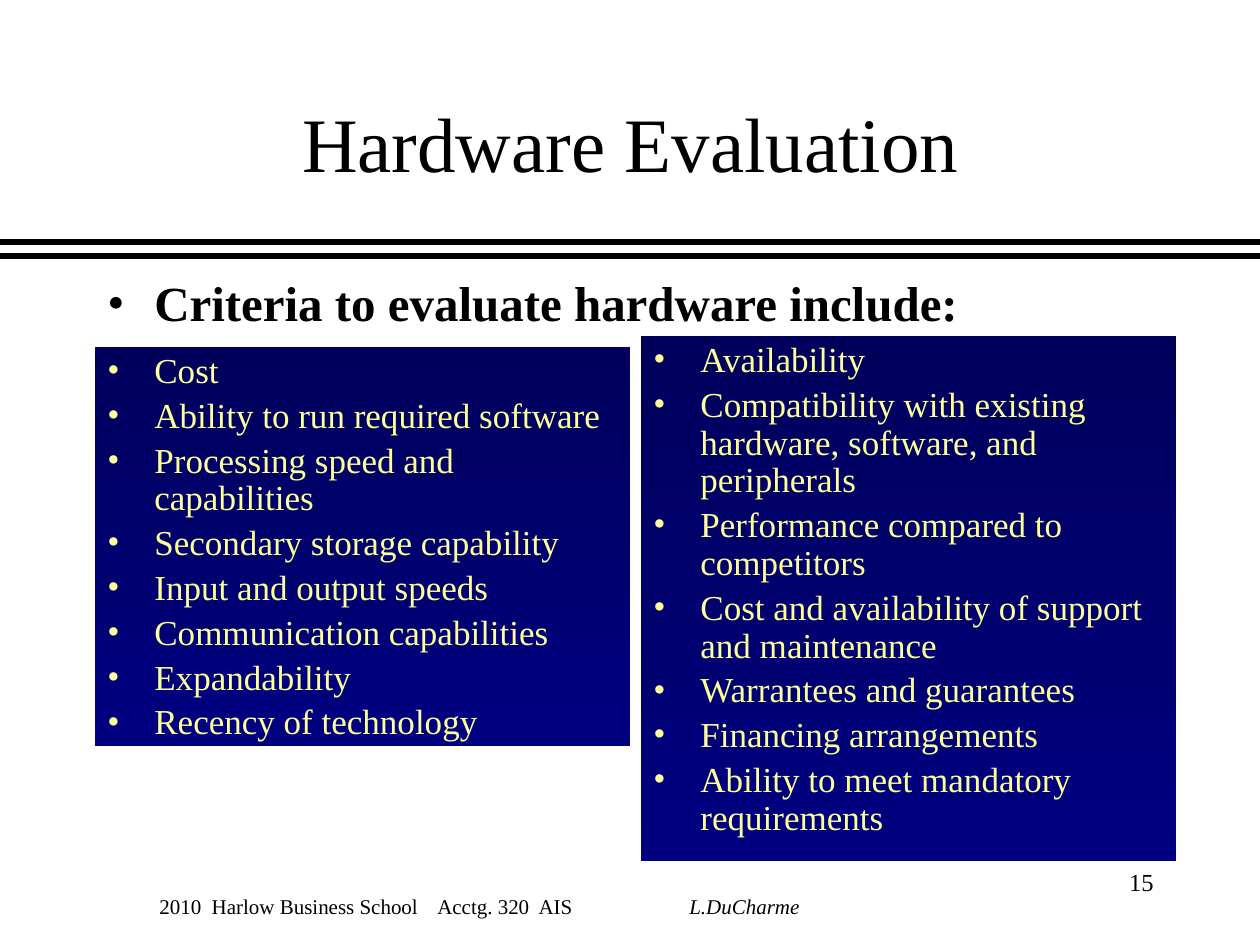
from dataclasses import dataclass
from lxml.etree import SubElement
from pptx import Presentation
from pptx.dml.color import RGBColor
from pptx.enum.shapes import MSO_CONNECTOR, MSO_SHAPE
from pptx.enum.text import MSO_ANCHOR, PP_ALIGN
from pptx.oxml.ns import qn
from pptx.util import Emu, Inches, Pt

SCALE = Inches(1) / 126


def px(n):
    return Emu(round(n * SCALE))


@dataclass(frozen=True)
class Theme:
    font: str = "Times New Roman"
    ink: str = "000000"
    pale: str = "FFFF99"
    dark: str = "00005C"
    navy: str = "000080"
    title: int = 44
    lead: int = 28
    item: int = 20
    page: int = 14
    foot: int = 12


class Deck:
    def __init__(self, theme, slide):
        self.theme = theme
        self.slide = slide

    def rule(self, y, width):
        line = self.slide.shapes.add_connector(
            MSO_CONNECTOR.STRAIGHT, 0, px(y), px(1260), px(y))
        line.line.color.rgb = RGBColor.from_string(self.theme.ink)
        line.line.width = Pt(width)
        SubElement(line._element.spPr, qn("a:effectLst"))

    def run(self, para, text, size, color, bold=False, italic=False):
        run = para.add_run()
        run.text = text
        font = run.font
        font.name, font.size = self.theme.font, Pt(size)
        font.bold, font.italic = bold, italic
        font.color.rgb = RGBColor.from_string(color)

    def box(self, x, y, w, h, align=PP_ALIGN.LEFT, anchor=MSO_ANCHOR.TOP):
        frame = self.slide.shapes.add_textbox(px(x), px(y), px(w), px(h)).text_frame
        frame.word_wrap = True
        frame.vertical_anchor = anchor
        frame.paragraphs[0].alignment = align
        return frame

    def bullets(self, frame, items, size, color, bold=False):
        for i, text in enumerate(items):
            para = frame.add_paragraph() if i else frame.paragraphs[0]
            para.alignment = PP_ALIGN.LEFT
            para.line_spacing = 0.9
            para.space_before = Pt(round(size * 0.2, 1))
            props = para._p.get_or_add_pPr()
            props.set("marL", str(px(47)))
            props.set("indent", str(-px(47)))
            SubElement(props, qn("a:buFont")).set("typeface", self.theme.font)
            SubElement(props, qn("a:buChar")).set("char", "•")
            self.run(para, text, size, color, bold)

    def panel(self, x, y, w, h, items):
        shape = self.slide.shapes.add_shape(
            MSO_SHAPE.RECTANGLE, px(x), px(y), px(w), px(h))
        shape.shadow.inherit = False
        shape.line.fill.background()
        shape.fill.gradient()
        shape.fill.gradient_angle = 270
        for stop, color in zip(shape.fill.gradient_stops,
                               (self.theme.dark, self.theme.navy)):
            stop.color.rgb = RGBColor.from_string(color)
        frame = shape.text_frame
        frame.word_wrap = True
        frame.vertical_anchor = MSO_ANCHOR.TOP
        self.bullets(frame, items, self.theme.item, self.theme.pale)

    def footer(self, x, y, w, h, parts, stops):
        para = self.box(x, y, w, h, anchor=MSO_ANCHOR.BOTTOM).paragraphs[0]
        tabs = SubElement(para._p.get_or_add_pPr(), qn("a:tabLst"))
        for stop in stops:
            tab = SubElement(tabs, qn("a:tab"))
            tab.set("pos", str(px(stop)))
            tab.set("algn", "l")
        for text, italic in parts:
            self.run(para, text, self.theme.foot, self.theme.ink, italic=italic)


def main():
    prs = Presentation()
    prs.slide_width, prs.slide_height = px(1260), px(945)
    theme = Theme()
    deck = Deck(theme, prs.slides.add_slide(prs.slide_layouts[6]))

    # Double rule and footer
    deck.rule(256, 3)
    deck.rule(242, 3.5)
    deck.footer(147, 862, 756, 63,
                [("2010  Harlow Business School\tAcctg. 320  AIS\t", False),
                 ("L.DuCharme", True)], (278, 530))

    # Title and page number
    title = deck.box(95, 63, 1071, 158, PP_ALIGN.CENTER, MSO_ANCHOR.MIDDLE)
    deck.run(title.paragraphs[0], "Hardware Evaluation", theme.title, theme.ink)
    page = deck.box(1061, 861, 105, 63, PP_ALIGN.RIGHT)
    deck.run(page.paragraphs[0], "15", theme.page, theme.ink)

    # Lead line
    lead = deck.box(95, 273, 1071, 567)
    deck.bullets(lead, ["Criteria to evaluate hardware include:"],
                 theme.lead, theme.ink, bold=True)

    # Criteria panels
    deck.panel(95, 347, 535, 399, [
        "Cost",
        "Ability to run required software",
        "Processing speed and capabilities",
        "Secondary storage capability",
        "Input and output speeds",
        "Communication capabilities",
        "Expandability",
        "Recency of technology",
    ])
    deck.panel(641, 336, 535, 525, [
        "Availability",
        "Compatibility with existing hardware, software, and peripherals",
        "Performance compared to competitors",
        "Cost and availability of support and maintenance",
        "Warrantees and guarantees",
        "Financing arrangements",
        "Ability to meet mandatory requirements",
    ])

    prs.save("out.pptx")


if __name__ == "__main__":
    main()
